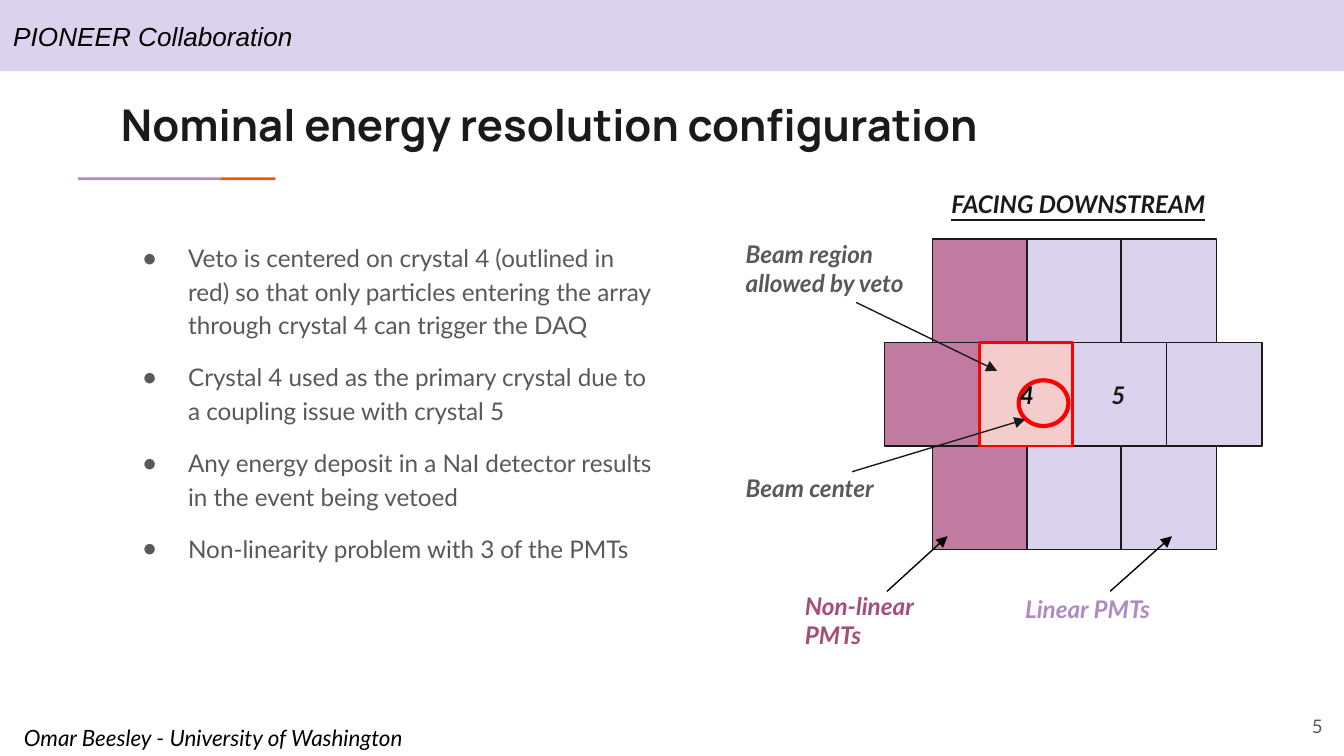
import pptx
import pptx.util
import pptx.dml.color
import pptx.enum.shapes
import pptx.enum.text
import pptx.oxml.ns
from lxml import etree

PX_PER_INCH = 100
SHAPES = pptx.enum.shapes.MSO_SHAPE
ALIGN = pptx.enum.text.PP_ALIGN
ANCHOR = pptx.enum.text.MSO_ANCHOR
INK, GREY, BLACK = "1A1A1A", "595959", "000000"
LILAC, PURPLE, MAUVE, RED = "DBD2EE", "AF8BC2", "C27BA0", "FF0000"

BULLETS = [
    "Veto is centered on crystal 4 (outlined in red) so that only particles "
    "entering the array through crystal 4 can trigger the DAQ",
    "Crystal 4 used as the primary crystal due to a coupling issue with crystal 5",
    "Any energy deposit in a NaI detector results in the event being vetoed",
    "Non-linearity problem with 3 of the PMTs",
]
CRYSTAL_ROWS = [(694, 3), (658, 4), (694, 3)]
CRYSTAL_TOP, CRYSTAL_PITCH, CRYSTAL_WIDTH, CRYSTAL_HEIGHT = 178, 70, 71, 77
LABELS = [
    ("Non-linear PMTs", (589, 430, 125, 34), "A64D79"),
    ("Beam region allowed by veto", (545, 168, 147, 40), GREY),
    ("Beam center", (545, 342, 122, 41), GREY),
    ("Linear PMTs", (753, 432, 125, 34), PURPLE),
    ("FACING DOWNSTREAM", (698, 131, 280, 37), INK),
    ("4", (749, 273, 42, 41), BLACK),
    ("5", (817, 273, 42, 41), INK),
]
ARROWS = [
    ((660, 440), (705, 399), BLACK),
    ((637, 225), (742, 276), INK),
    ((634, 351), (763, 312), INK),
    ((826, 440), (872, 399), BLACK),
]


def px(length):
    return pptx.util.Emu(round(length * 914400 / PX_PER_INCH))


def color(value):
    return pptx.dml.color.RGBColor.from_string(value)


def place(shape, box):
    shape.left, shape.top, shape.width, shape.height = map(px, box)


def prepare_frame(frame, anchor=ANCHOR.TOP):
    frame.word_wrap = True
    frame.auto_size = pptx.enum.text.MSO_AUTO_SIZE.NONE
    frame.vertical_anchor = anchor
    frame.margin_left = frame.margin_right = px(10)
    frame.margin_top = frame.margin_bottom = px(10)


def format_paragraph(paragraph, size, value, font="Lato", bold=False,
                     italic=False, underline=False, align=ALIGN.LEFT):
    paragraph.alignment = align
    for run in paragraph.runs:
        run.font.name = font
        run.font.size = pptx.util.Pt(size)
        run.font.color.rgb = color(value)
        run.font.bold = bold
        run.font.italic = italic
        run.font.underline = underline


def write(shape, text, size, value, anchor=ANCHOR.TOP, **style):
    prepare_frame(shape.text_frame, anchor)
    shape.text_frame.text = text
    format_paragraph(shape.text_frame.paragraphs[0], size, value, **style)


def add_text(slide, box, text, size, value, **style):
    shape = slide.shapes.add_textbox(*map(px, box))
    write(shape, text, size, value, **style)


def add_block(slide, kind, box, fill=None, line=None, weight=0.75):
    shape = slide.shapes.add_shape(kind, *map(px, box))
    shape.shadow.inherit = False
    if fill:
        shape.fill.solid()
        shape.fill.fore_color.rgb = color(fill)
    else:
        shape.fill.background()
    if line:
        shape.line.color.rgb = color(line)
        shape.line.width = pptx.util.Pt(weight)
    else:
        shape.line.fill.background()
    return shape


def add_arrow(slide, start, end, value):
    connector = slide.shapes.add_connector(
        pptx.enum.shapes.MSO_CONNECTOR.STRAIGHT, *map(px, start + end))
    connector.line.color.rgb = color(value)
    connector.line.width = pptx.util.Pt(0.75)
    qn = pptx.oxml.ns.qn
    etree.SubElement(connector.line._get_or_add_ln(), qn("a:tailEnd"), type="triangle")
    etree.SubElement(connector._element.spPr, qn("a:effectLst"))


def fill_bullets(body):
    place(body, (80, 168, 420, 272))
    frame = body.text_frame
    prepare_frame(frame)
    frame.text = "\n".join(BULLETS)
    for index, paragraph in enumerate(frame.paragraphs):
        format_paragraph(paragraph, 13, GREY)
        paragraph.line_spacing = 1.15
        paragraph.space_before = pptx.util.Pt(10 if index else 0)
        paragraph.space_after = pptx.util.Pt(0)
        properties = paragraph._p.get_or_add_pPr()
        properties.set("marL", str(px(50)))
        properties.set("indent", str(px(-34)))
        etree.SubElement(properties, pptx.oxml.ns.qn("a:buChar"), char="●")


def add_crystals(slide):
    for row, (left, count) in enumerate(CRYSTAL_ROWS):
        for column in range(count):
            box = (left + column * CRYSTAL_PITCH, CRYSTAL_TOP + row * CRYSTAL_HEIGHT,
                   CRYSTAL_WIDTH, CRYSTAL_HEIGHT)
            fill = LILAC if column else MAUVE
            add_block(slide, SHAPES.RECTANGLE, box, fill, INK)
    add_block(slide, SHAPES.RECTANGLE, (729, 255, 69, 77), "F4CCCC", RED, 1.5)
    add_block(slide, SHAPES.FLOWCHART_CONNECTOR, (758, 283, 37, 34), None, RED, 2.25)


def add_frame(slide):
    header = add_block(slide, SHAPES.RECTANGLE, (0, 0, 1000, 53), LILAC)
    write(header, "PIONEER Collaboration", 14, BLACK, anchor=ANCHOR.MIDDLE,
          font="Arial", italic=True)
    add_block(slide, SHAPES.RECTANGLE, (58, 132, 106, 2), PURPLE)
    add_block(slide, SHAPES.RECTANGLE, (164, 132, 41, 2), "EB5600")
    add_text(slide, (8, 529, 353, 31), "Omar Beesley - University of Washington",
             12, BLACK, italic=True)
    add_text(slide, (934, 519, 60, 43), "5", 10, GREY,
             anchor=ANCHOR.MIDDLE, align=ALIGN.RIGHT)


def main():
    presentation = pptx.Presentation()
    presentation.slide_width, presentation.slide_height = px(1000), px(562.5)
    slide = presentation.slides.add_slide(presentation.slide_layouts[1])
    add_frame(slide)
    title = slide.shapes.title
    place(title, (80, 63, 841, 59))
    write(title, "Nominal energy resolution configuration", 23.4, INK,
          font="Manrope", bold=True)
    fill_bullets(slide.placeholders[1])
    add_crystals(slide)
    for start, end, value in ARROWS:
        add_arrow(slide, start, end, value)
    for text, box, value in LABELS:
        add_text(slide, box, text, 13, value, bold=True, italic=True,
                 underline=text.startswith("FACING"))
    presentation.save("out.pptx")


if __name__ == "__main__":
    main()
